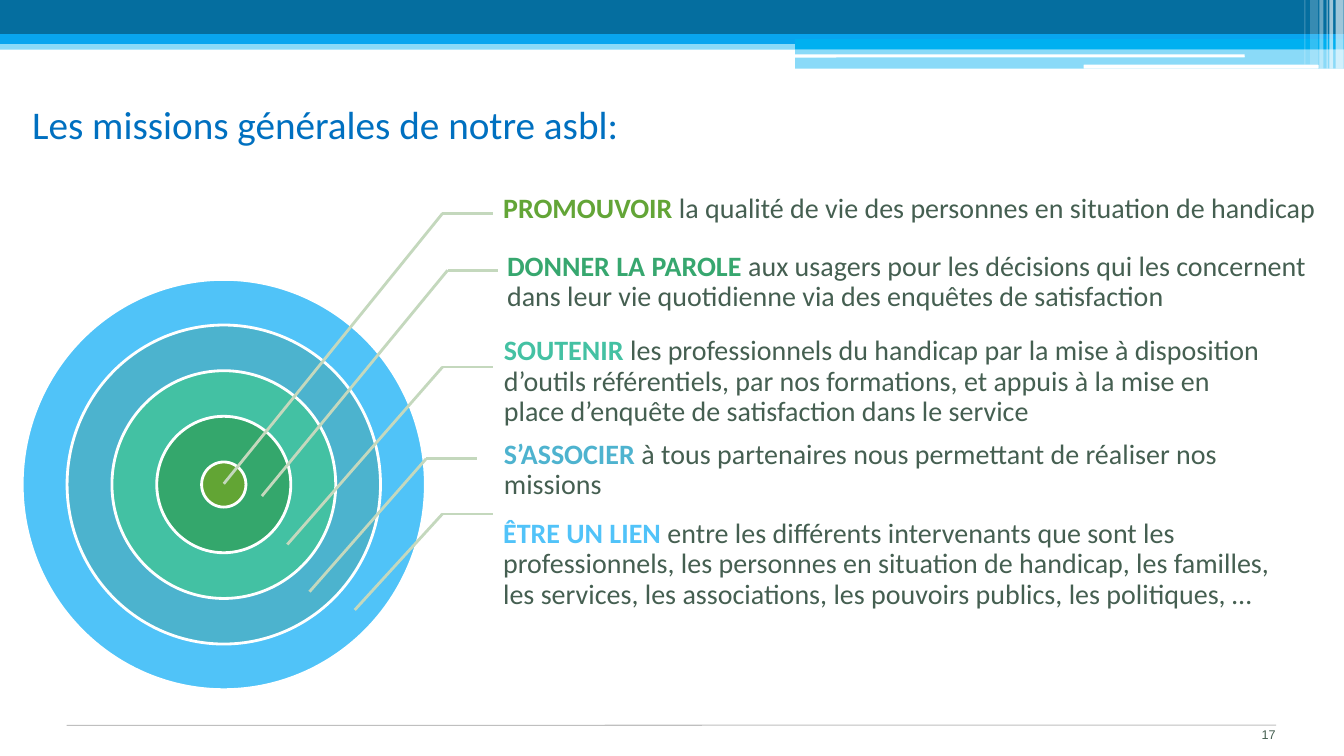
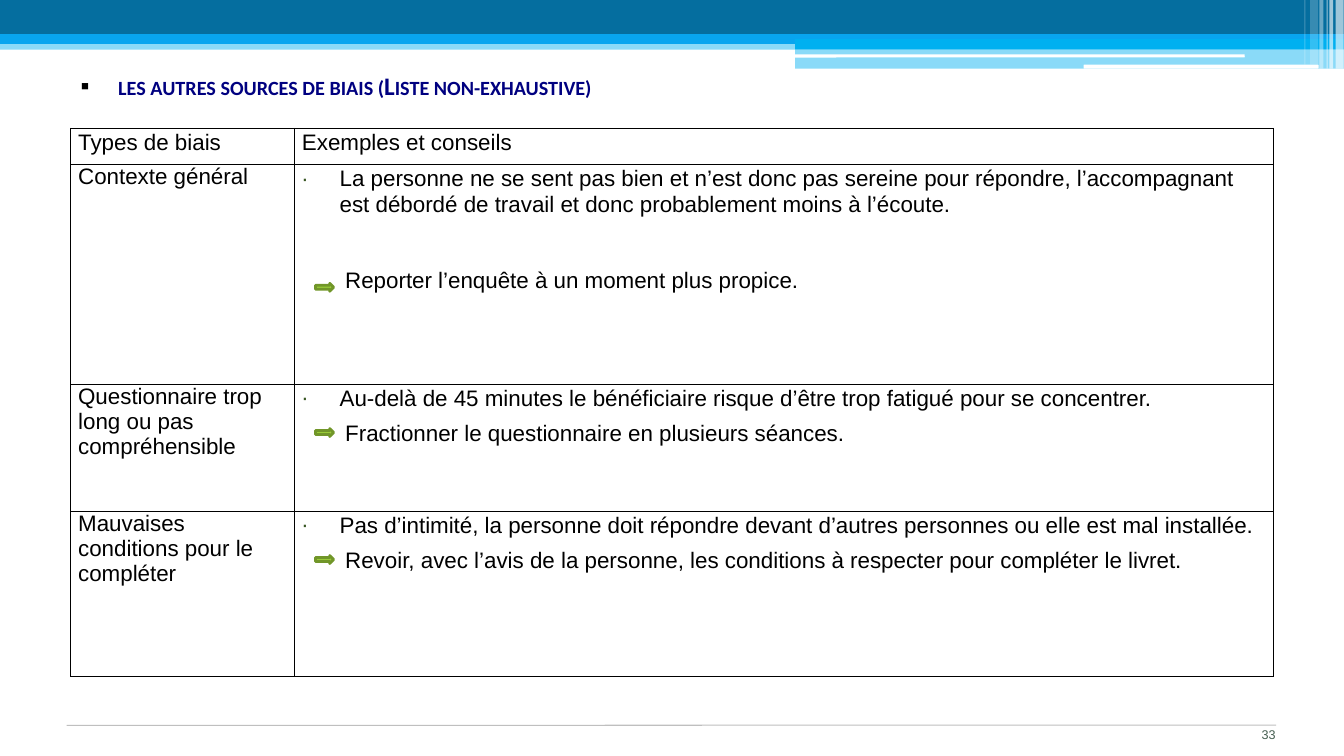
from dataclasses import dataclass

from lxml import etree
from pptx import Presentation
from pptx.dml.color import RGBColor
from pptx.enum.shapes import MSO_CONNECTOR, MSO_SHAPE
from pptx.enum.text import MSO_ANCHOR, MSO_AUTO_SIZE, PP_ALIGN
from pptx.oxml.ns import qn
from pptx.util import Cm, Pt

RECT, ROUND_RECT = MSO_SHAPE.RECTANGLE, MSO_SHAPE.ROUNDED_RECTANGLE
OVAL, ARROW = MSO_SHAPE.OVAL, MSO_SHAPE.RIGHT_ARROW
STRAIGHT = MSO_CONNECTOR.STRAIGHT
TOP, MIDDLE = MSO_ANCHOR.TOP, MSO_ANCHOR.MIDDLE
LEFT, RIGHT = PP_ALIGN.LEFT, PP_ALIGN.RIGHT
TITLE_ONLY = 5


@dataclass(frozen=True)
class Theme:
    title_font: str = "Calibri"
    table_font: str = "Arial"
    title_size: int = 28
    heading_size: int = 18
    callout_size: int = 20
    table_size: int = 16
    number_size: int = 9
    title: str = "0070C0"
    heading: str = "000080"
    text: str = "455F51"
    black: str = "000000"
    white: str = "FFFFFF"
    deep: str = "056E9F"
    azure: str = "08A5EF"
    sky: str = "00B0F0"
    rule: str = "BFBFBF"
    leader: str = "C4D8BD"
    bullet: str = "385623"
    arrow: str = "99CB38"
    arrow_edge: str = "719629"
    rings: tuple = ("50C3F8", "4CB3CE", "43C1A3", "34A76C", "62A534")


THEME = Theme()


@dataclass(frozen=True)
class Box:
    """A rectangle in centimetres."""
    left: float
    top: float
    width: float
    height: float

    def inner(self, left, top, width, height):
        return Box(self.left + left, self.top + top, width, height)

    def lengths(self):
        return Cm(self.left), Cm(self.top), Cm(self.width), Cm(self.height)


SLIDE = Box(0, 0, 33.87, 19.05)

# Header bands: preset shape, box, colour, opacity in percent
BANDS = [
    (RECT, (0, 1.02, 33.87, 0.23), THEME.sky, 46),
    (RECT, (0, 0, 33.87, 0.86), THEME.deep, 100),
    (RECT, (0, 0.86, 33.87, 0.25), THEME.azure, 100),
    (RECT, (20.04, 0.99, 13.83, 0.25), THEME.sky, 100),
    (RECT, (20.04, 1.22, 13.83, 0.51), THEME.sky, 46),
    (ROUND_RECT, (20.02, 1.37, 11.35, 0.08), THEME.white, 100),
    (ROUND_RECT, (27.31, 1.63, 5.92, 0.1), THEME.white, 100),
]
# White stripes at the right end: left, width, height, opacity
STRIPES = [
    (33.66, 0.2, 1.73, 61), (33.5, 0.1, 1.73, 61), (33.43, 0.03, 1.73, 60),
    (33.25, 0.1, 1.73, 40), (33.02, 0.2, 1.63, 20), (32.87, 0.03, 1.63, 26),
]

# Callouts: keyword, colour, sentence, text box, elbow, tip
CALLOUTS = [
    ("PROMOUVOIR ", "63A537",
     "la qualité de vie des personnes en situation de handicap",
     (11.77, 0.23, 21.5, 1.12), (10.65, 0.88), (5.14, 7.69)),
    ("DONNER LA PAROLE ", "37A76F",
     "aux usagers pour les décisions qui les concernent dans leur vie "
     "quotidienne via des enquêtes de satisfaction",
     (11.87, 1.7, 21.06, 1.83), (10.78, 2.31), (6.1, 8)),
    ("SOUTENIR ", "44C1A3",
     "les professionnels du handicap par la mise à disposition d’outils "
     "référentiels, par nos formations, et appuis à la mise en place "
     "d’enquête de satisfaction dans le service",
     (11.79, 4.21, 19.74, 1.83), (10.65, 4.75), (6.74, 9.22)),
    ("S’ASSOCIER ", "4EB3CF",
     "à tous partenaires nous permettant de réaliser nos missions",
     (11.79, 6.65, 19.46, 1.4), (10.24, 7.06), (7.3, 10.41)),
    ("ÊTRE UN LIEN ", "51C3F9",
     "entre les différents intervenants que sont les professionnels, les "
     "personnes en situation de handicap, les familles, les services, les "
     "associations, les pouvoirs publics, les politiques, …",
     (11.77, 7.95, 20.37, 3.56), (10.65, 8.45), (8.44, 10.87)),
]

TABLE_HEAD = ("Types de biais", "Exemples et conseils")
# Table rows: kind, example, advice, row height, space before advice, arrow offset
BIASES = [
    ("Contexte général",
     "La personne ne se sent pas bien et n’est donc pas sereine pour répondre, "
     "l’accompagnant est débordé de travail et donc probablement moins à l’écoute.",
     "Reporter l’enquête à un moment plus propice.", 5.54, 35, 3),
    ("Questionnaire trop long ou pas\ncompréhensible",
     "Au-delà de 45 minutes le bénéficiaire risque d’être trop fatigué pour se "
     "concentrer.",
     "Fractionner le questionnaire en plusieurs séances.", 3.2, 6, 1.12),
    ("Mauvaises conditions pour le\ncompléter",
     "Pas d’intimité, la personne doit répondre devant d’autres personnes ou elle "
     "est mal installée.",
     "Revoir, avec l’avis de la personne, les conditions à respecter pour compléter "
     "le livret.", 4.17, 6, 1.12),
]


def color(code):
    return RGBColor.from_string(code)


def set_font(font, name, size, code, bold=False):
    font.name, font.size, font.bold = name, Pt(size), bold
    font.color.rgb = color(code)


def set_frame(frame, anchor, left=0.25, top=0.13, right=0.25, bottom=0.13):
    frame.word_wrap = True
    frame.auto_size = MSO_AUTO_SIZE.NONE
    frame.vertical_anchor = anchor
    frame.margin_left, frame.margin_right = Cm(left), Cm(right)
    frame.margin_top, frame.margin_bottom = Cm(top), Cm(bottom)


def set_indent(para, left, first=0):
    props = para._p.get_or_add_pPr()
    props.set("marL", str(Cm(left)))
    props.set("indent", str(Cm(first)))
    return props


def set_bullet(para, mark, code):
    props = set_indent(para, 0.95, -0.95)
    tint = etree.SubElement(props, qn("a:buClr"))
    etree.SubElement(tint, qn("a:srgbClr"), val=code)
    etree.SubElement(props, qn("a:buFont"), typeface=THEME.table_font)
    etree.SubElement(props, qn("a:buChar"), char=mark)


def add_shape(page, kind, box, fill, opacity=100, edge=None):
    shape = page.shapes.add_shape(kind, *box.lengths())
    shape.shadow.inherit = False
    shape.fill.solid()
    shape.fill.fore_color.rgb = color(fill)
    if opacity < 100:
        tint = shape.element.spPr.find(".//" + qn("a:srgbClr"))
        etree.SubElement(tint, qn("a:alpha"), val=str(opacity * 1000))
    if edge:
        shape.line.color.rgb = color(edge)
        shape.line.width = Pt(2)
    else:
        shape.line.fill.background()
    return shape


def add_line(page, start, end, code, width):
    line = page.shapes.add_connector(STRAIGHT, *map(Cm, start + end))
    line.line.color.rgb = color(code)
    line.line.width = Pt(width)
    etree.SubElement(line.element.spPr, qn("a:effectLst"))
    return line


def add_layout_frame(page, layout):
    """Draw the bands and footer rule, then hand them to the layout."""
    parts = [add_shape(page, kind, SLIDE.inner(*place), fill, opacity)
             for kind, place, fill, opacity in BANDS]
    parts += [add_shape(page, RECT, SLIDE.inner(left, 0, width, height),
                        THEME.white, opacity)
              for left, width, height, opacity in STRIPES]
    parts.append(add_line(page, (1.68, 18.28), (32.16, 18.27), THEME.rule, 0.75))
    for number, part in enumerate(parts, 100):
        part.element.find(".//" + qn("p:cNvPr")).set("id", str(number))
        layout.shapes.element.append(part.element)


def add_title(page, text, box, size, code, anchor, bold=False):
    title = page.shapes.title
    title.left, title.top, title.width, title.height = box.lengths()
    set_frame(title.text_frame, anchor)
    title.text_frame.text = text
    para = title.text_frame.paragraphs[0]
    para.alignment = LEFT
    set_font(para.font, THEME.title_font, size, code, bold)
    return para


def add_page_number(page, number):
    box = SLIDE.inner(29.97, 18.34, 2.18, 0.48)
    frame = page.shapes.add_textbox(*box.lengths()).text_frame
    set_frame(frame, TOP, 0, 0, 0, 0)
    para = frame.paragraphs[0]
    para.text, para.alignment, para.line_spacing = str(number), RIGHT, 0.95
    set_font(para.font, THEME.table_font, THEME.number_size, THEME.text)


def add_rings(page, box):
    for index, fill in enumerate(THEME.rings):
        scale = 1 - 0.2225 * index
        width, height = box.width * scale, box.height * scale
        ring = box.inner((box.width - width) / 2, (box.height - height) / 2,
                         width, height)
        add_shape(page, OVAL, ring, fill, edge=THEME.white)


def add_callout(page, region, keyword, code, sentence, place, elbow, tip):
    # Leader: a short shelf and a slanted line to the ring
    corner = (region.left + elbow[0], region.top + elbow[1])
    target = (region.left + tip[0], region.top + tip[1])
    shelf_end = (corner[0] + 1.27, corner[1])
    for end in (shelf_end, target):
        add_line(page, corner, end, THEME.leader, 2)
    # Text
    frame = page.shapes.add_textbox(*region.inner(*place).lengths()).text_frame
    set_frame(frame, MIDDLE, 0.41, 0.08, 0.08, 0.08)
    para = frame.paragraphs[0]
    para.line_spacing = 0.9
    for text, tint, bold in ((keyword, code, True), (sentence, THEME.text, False)):
        span = para.add_run()
        span.text = text
        set_font(span.font, THEME.title_font, THEME.callout_size, tint, bold)


def add_missions(page, region):
    add_rings(page, region.inner(0.06, 2.54, 10.16, 10.34))
    for callout in CALLOUTS:
        add_callout(page, region, *callout)


def style_cell(cell):
    cell.margin_left = cell.margin_right = Cm(0.19)
    cell.margin_top = cell.margin_bottom = 0
    props = cell._tc.get_or_add_tcPr()
    for side in ("a:lnL", "a:lnR", "a:lnT", "a:lnB"):
        edge = etree.SubElement(props, qn(side), w=str(Pt(0.5)))
        paint = etree.SubElement(edge, qn("a:solidFill"))
        etree.SubElement(paint, qn("a:srgbClr"), val=THEME.black)
    cell.fill.background()
    for para in cell.text_frame.paragraphs:
        set_font(para.font, THEME.table_font, THEME.table_size, THEME.black)


def add_bias_table(page, box):
    heights = [0.91] + [bias[3] for bias in BIASES]
    table = page.shapes.add_table(len(heights), 2, *box.lengths()).table
    table.first_row = table.horz_banding = False
    table.columns[0].width, table.columns[1].width = Cm(5.64), Cm(box.width - 5.64)
    for row, height in zip(table.rows, heights):
        row.height = Cm(height)
    # Text
    for column, text in enumerate(TABLE_HEAD):
        table.cell(0, column).text = text
        table.cell(0, column).text_frame.paragraphs[0].line_spacing = 1.07
    for index, (kind, example, advice, _, gap, offset) in enumerate(BIASES, 1):
        table.cell(index, 0).text = kind
        frame = table.cell(index, 1).text_frame
        frame.text = f"{example}\n{advice}"
        first, second = frame.paragraphs
        first.line_spacing = second.line_spacing = 1.07
        second.space_before = Pt(gap)
        set_bullet(first, "∙", THEME.bullet)
        set_indent(second, 1.09)
        # Arrow in front of the advice
        arrow = box.inner(6.17, sum(heights[:index]) + offset, 0.46, 0.2)
        add_shape(page, ARROW, arrow, THEME.arrow, edge=THEME.arrow_edge)
    for cell in table.iter_cells():
        style_cell(cell)


def missions_slide(page):
    add_title(page, "Les missions générales de notre asbl:",
              SLIDE.inner(0.56, 2.16, 30.61, 1.93), THEME.title_size, THEME.title, MIDDLE)
    add_missions(page, SLIDE.inner(0.5, 4.5, 33.3, 13))
    add_page_number(page, 17)


def biases_slide(page):
    heading = add_title(page, "les autres sources de biais (Liste non-exhaustive)",
                        SLIDE.inner(1.78, 1.6, 14.02, 1.04), THEME.heading_size,
                        THEME.heading, TOP, bold=True)
    heading.line_spacing = 1.07
    set_bullet(heading, "▪", THEME.black)
    heading.runs[0].font._element.set("cap", "small")
    add_bias_table(page, SLIDE.inner(1.78, 3.23, 30.3, 13.82))
    add_page_number(page, 33)


def main():
    deck = Presentation()
    deck.slide_width, deck.slide_height = Cm(SLIDE.width), Cm(SLIDE.height)
    layout = deck.slide_layouts[TITLE_ONLY]
    pages = [deck.slides.add_slide(layout) for _ in range(2)]
    add_layout_frame(pages[0], layout)
    missions_slide(pages[0])
    biases_slide(pages[1])
    deck.save("out.pptx")


if __name__ == "__main__":
    main()
